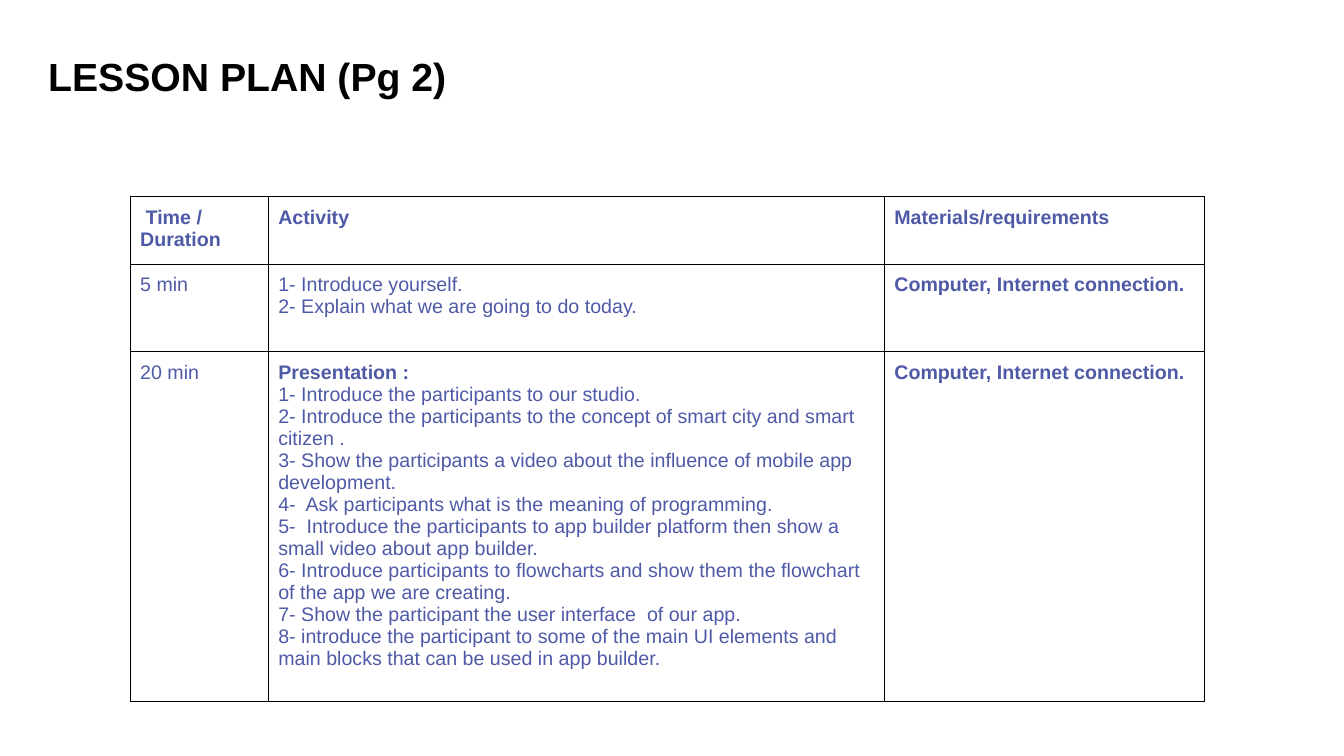
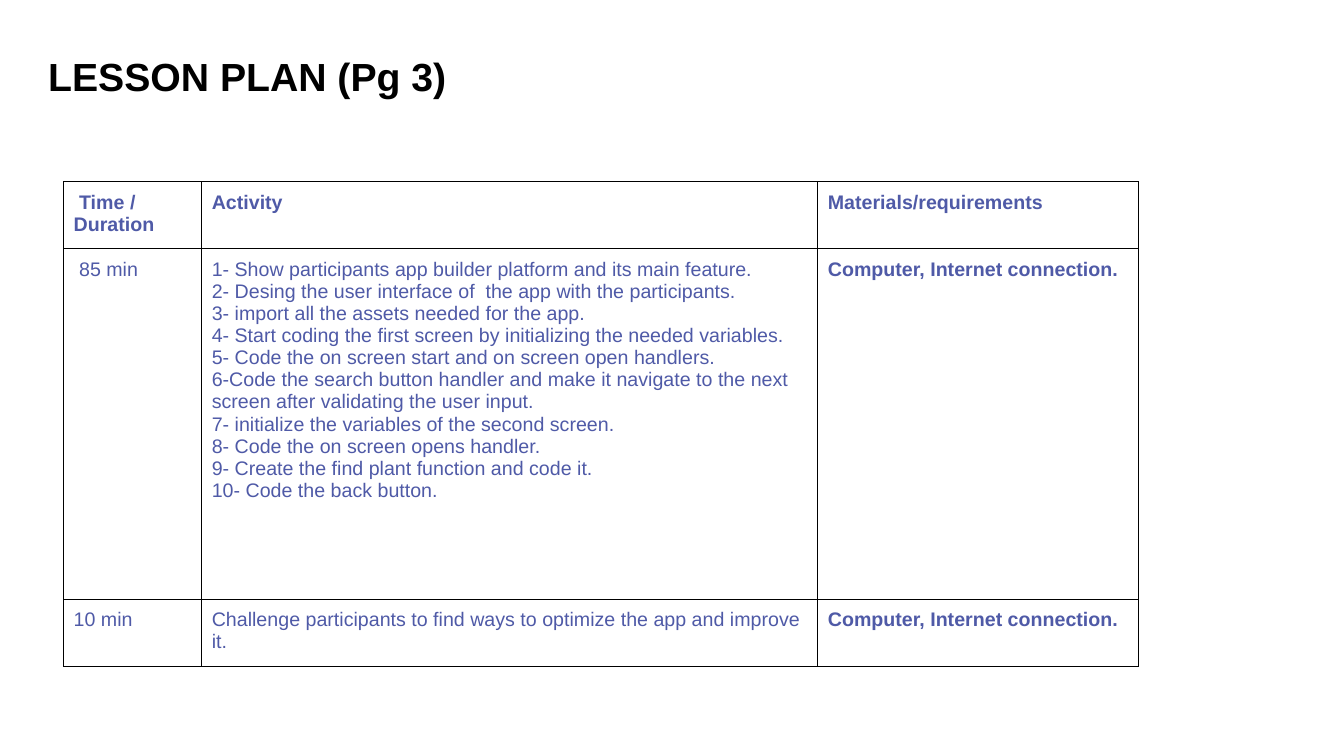
from lxml import etree
from pptx import Presentation
from pptx import util as u
from pptx.dml.color import RGBColor
from pptx.enum import text
from pptx.oxml import parse_xml
from pptx.oxml import ns

WIDE, HIGH = u.Inches(13.33), u.Inches(7.5)
BLACK = RGBColor(0x00, 0x00, 0x00)
WHITE = RGBColor(0xFF, 0xFF, 0xFF)
BLUE = RGBColor(0x4F, 0x5A, 0xA7)
TITLE = {"size": u.Pt(28), "name": "Arial", "bold": True}
BODY = {"size": u.Pt(14), "name": "Arial"}
INSET = dict.fromkeys(
    ("margin_left", "margin_right", "margin_top", "margin_bottom"), u.Inches(0.1))
COLS = (10.28, 45.84, 23.86)
SHORT, MID, TALL = 8.93, 11.6, 46.3
HEAD = (" Time / Duration", "Activity", "Materials/requirements")
NEEDS = "Computer, Internet connection."

PLANS = (
    {
        "title": " LESSON PLAN (Pg 2)",
        "spot": (9.68, 26),
        "rows": (SHORT, MID, TALL),
        "steps": (
            ("5 min", """1- Introduce yourself.
2- Explain what we are going to do today."""),
            ("20 min", """Presentation :
1- Introduce the participants to our studio.
2- Introduce the participants to the concept of smart city and smart citizen .
3- Show the participants a video about the influence of mobile app development.
4-  Ask participants what is the meaning of programming.
5-  Introduce the participants to app builder platform then show a small video about app builder.
6- Introduce participants to flowcharts and show them the flowchart of the app we are creating.
7- Show the participant the user interface  of our app.
8- introduce the participant to some of the main UI elements and main blocks that can be used in app builder."""),
        ),
    },
    {
        "title": " LESSON PLAN (Pg 3)",
        "spot": (4.73, 24),
        "rows": (SHORT, TALL, SHORT),
        "steps": (
            (" 85 min", """1- Show participants app builder platform and its main feature.
2- Desing the user interface of  the app with the participants.
3- import all the assets needed for the app.
4- Start coding the first screen by initializing the needed variables.
5- Code the on screen start and on screen open handlers.
6-Code the search button handler and make it navigate to the next screen after validating the user input.
7- initialize the variables of the second screen.
8- Code the on screen opens handler.
9- Create the find plant function and code it.
10- Code the back button."""),
            ("10 min", "Challenge participants to find ways to optimize the app and improve it."),
        ),
    },
)


def across(share):
    """Turn a percentage of the slide width into a length."""
    return u.Emu(int(WIDE * share / 100))


def down(share):
    """Turn a percentage of the slide height into a length."""
    return u.Emu(int(HIGH * share / 100))


def style(item, looks):
    """Set every format value in a dict on an object."""
    for key, value in looks.items():
        setattr(item, key, value)


def paint(font, looks, color):
    """Give a font its format values and colour."""
    style(font, looks)
    font.color.rgb = color


def head(slide, words):
    """Place and format the slide title."""
    shape = slide.shapes.title
    style(shape, {"left": across(2.03), "top": down(6.27),
                  "width": across(66.24), "height": down(7.6)})
    frame = shape.text_frame
    frame.text = words
    style(frame, {"word_wrap": True, "vertical_anchor": text.MSO_ANCHOR.MIDDLE,
                  "auto_size": text.MSO_AUTO_SIZE.SHAPE_TO_FIT_TEXT})
    line = frame.paragraphs[0]
    line.alignment = text.PP_ALIGN.LEFT
    paint(line.runs[0].font, TITLE, BLACK)


def edge(cell):
    """Draw a thin black line on all four sides of a cell."""
    props = cell._tc.get_or_add_tcPr()
    for side in ("lnL", "lnR", "lnT", "lnB"):
        props.append(parse_xml(
            f'<a:{side} {ns.nsdecls("a")} w="{u.Pt(0.75)}"><a:solidFill>'
            f'<a:srgbClr val="{BLACK}"/></a:solidFill></a:{side}>'))


def fill(cell, words, strong):
    """Write and format the lines of one table cell."""
    style(cell, INSET)
    edge(cell)
    cell.fill.solid()
    cell.fill.fore_color.rgb = WHITE
    cell.text = words
    for line in cell.text_frame.paragraphs:
        run = line.runs[0]
        bold = strong or run.text.endswith(":")
        paint(run.font, {**BODY, "bold": bold}, BLUE)


def grid(slide, spot, rows, steps):
    """Add the lesson table with its header and steps."""
    frame = slide.shapes.add_table(
        len(rows), len(COLS), across(spot[0]), down(spot[1]),
        across(sum(COLS)), down(sum(rows)))
    table = frame.table
    style(table, {"first_row": False, "horz_banding": False})
    for col, share in zip(table.columns, COLS):
        col.width = across(share)
    for row, share in zip(table.rows, rows):
        row.height = down(share)
    lines = [HEAD] + [(*step, NEEDS) for step in steps]
    for r, line in enumerate(lines):
        for c, words in enumerate(line):
            fill(table.cell(r, c), words, r == 0 or c == 2)


def main():
    """Build and save the lesson plan slides."""
    deck = Presentation()
    style(deck, {"slide_width": WIDE, "slide_height": HIGH})
    for plan in PLANS:
        slide = deck.slides.add_slide(deck.slide_layouts[5])
        head(slide, plan["title"])
        grid(slide, plan["spot"], plan["rows"], plan["steps"])
    deck.save("out.pptx")


if __name__ == "__main__":
    main()
